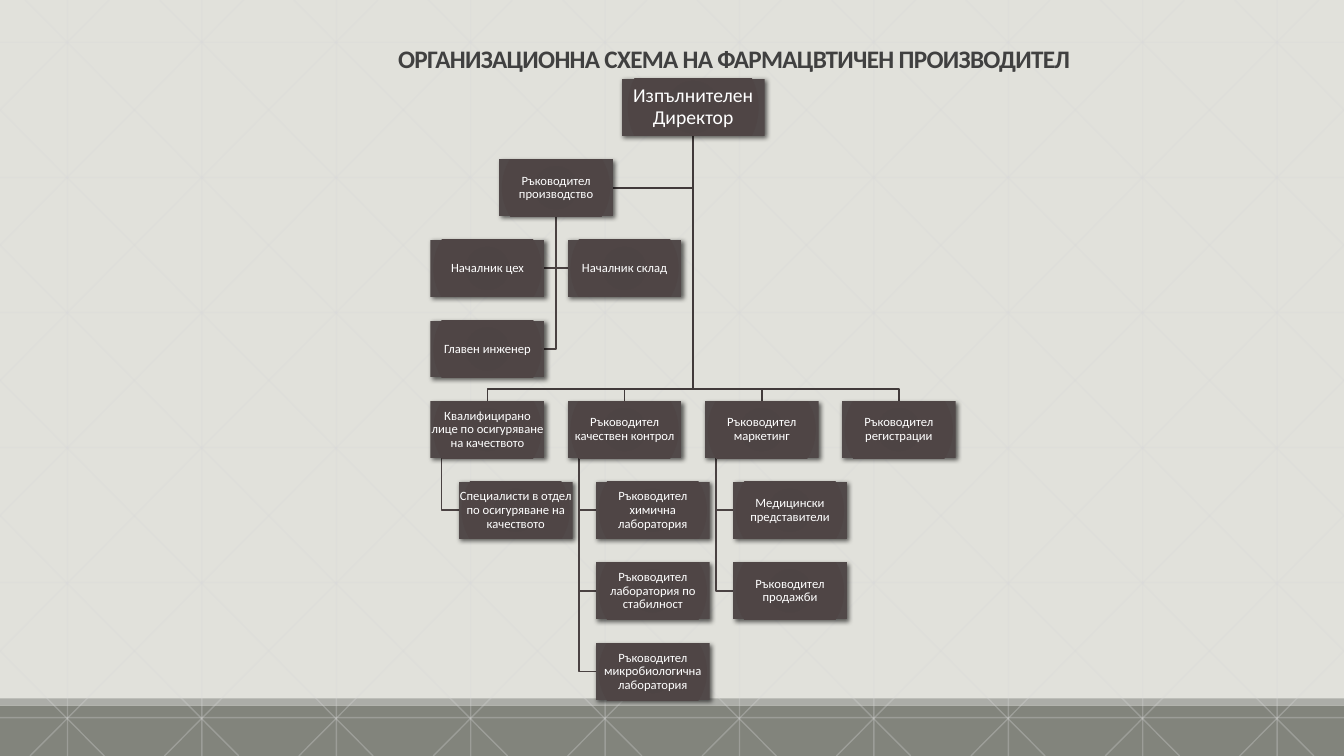
from dataclasses import dataclass

from lxml import etree
from pptx import Presentation
from pptx.dml.color import RGBColor
from pptx.enum.shapes import MSO_CONNECTOR, MSO_SHAPE
from pptx.enum.text import MSO_ANCHOR, PP_ALIGN
from pptx.oxml import parse_xml
from pptx.oxml.ns import nsdecls, qn
from pptx.util import Inches, Pt

LINE = MSO_CONNECTOR.STRAIGHT
RECTANGLE = MSO_SHAPE.RECTANGLE
CENTER = PP_ALIGN.CENTER
MIDDLE, BOTTOM = MSO_ANCHOR.MIDDLE, MSO_ANCHOR.BOTTOM


@dataclass(frozen=True)
class Theme:
    font: str = "Calibri"
    background: str = "E1E1DB"
    band: str = "82847C"
    band_edge: str = "ACADA8"
    lattice: str = "D9D9D9"
    title: str = "404040"
    text: str = "FFFFFF"
    shadow: str = "000000"
    main_branch: str = "413A3A"
    sub_branch: str = "4A4242"
    box_stops: tuple = ((0, "4D4343"), (34, "4D4444"), (70, "4F4545"), (100, "514949"))
    title_size: float = 18
    director_size: float = 14
    box_size: float = 9
    lattice_width: float = 1
    branch_width: float = 1.25


THEME = Theme()

WIDTH, HEIGHT = 13.33, 7.5
LATTICE_STEP = WIDTH / 10
DIAGONAL_RUN = 7.45

CHART_LEFT, CHART_TOP = 4.27, 0.78
COLUMN_STEP, ROW_STEP = 1.36, 0.8
BOX_WIDTH, BOX_HEIGHT = 1.13, 0.565
DIRECTOR_WIDTH = 1.42
STAFF_INDENT, RAIL_INDENT = 0.28, 0.11
BUS_GAP = 0.12
PRODUCTION_ROW, DEPARTMENT_ROW = 1, 4

DIRECTOR = "Изпълнителен Директор"
PRODUCTION = "Ръководител производство"
# Column, row and text of the boxes under production
PRODUCTION_STAFF = [
    (0, 2, "Началник цех"),
    (1, 2, "Началник склад"),
    (0, 3, "Главен инженер"),
]
DEPARTMENTS = [
    ("Квалифицирано лице по осигуряване на качеството",
     ["Специалисти в отдел по осигуряване на качеството"]),
    ("Ръководител качествен контрол",
     ["Ръководител химична лаборатория",
      "Ръководител лаборатория по стабилност",
      "Ръководител микробиологична лаборатория"]),
    ("Ръководител маркетинг",
     ["Медицински представители", "Ръководител продажби"]),
    ("Ръководител регистрации", []),
]


def column_left(column):
    return CHART_LEFT + column * COLUMN_STEP


def column_center(column):
    return column_left(column) + BOX_WIDTH / 2


def row_top(row):
    return CHART_TOP + row * ROW_STEP


def row_middle(row):
    return row_top(row) + BOX_HEIGHT / 2


def row_bottom(row):
    return row_top(row) + BOX_HEIGHT


def write_text(shape, text, *, size, color, anchor=MIDDLE, bold=False,
               line_spacing=0.9, inset=0.01, tracking=0):
    frame = shape.text_frame
    frame.word_wrap = True
    frame.vertical_anchor = anchor
    frame.margin_left = frame.margin_right = Inches(inset)
    frame.margin_top = frame.margin_bottom = Inches(inset)
    para = frame.paragraphs[0]
    para.alignment = CENTER
    para.line_spacing = line_spacing
    span = para.add_run()
    span.text = text
    span.font.name = THEME.font
    span.font.size = Pt(size)
    span.font.bold = bold
    span.font.color.rgb = RGBColor.from_string(color)
    if tracking:
        span.font._element.set("spc", str(round(tracking * 100)))


def add_rectangle(page, left, top, width, height):
    shape = page.shapes.add_shape(
        RECTANGLE, Inches(left), Inches(top), Inches(width), Inches(height))
    shape.shadow.inherit = False
    shape.line.fill.background()
    return shape


def add_band(page, top, height, color):
    band = add_rectangle(page, 0, top, WIDTH, height)
    band.fill.solid()
    band.fill.fore_color.rgb = RGBColor.from_string(color)


def add_lattice_line(page, start, end):
    line = page.shapes.add_connector(LINE, *(Inches(value) for value in (*start, *end)))
    line.line.width = Pt(THEME.lattice_width)
    line.line.color.rgb = RGBColor.from_string(THEME.lattice)
    properties = line._element.spPr
    color = properties.find(".//" + qn("a:srgbClr"))
    etree.SubElement(color, qn("a:alpha"), val="30000")
    etree.SubElement(properties, qn("a:effectLst"))


def add_lattice(page):
    """Upright, level and mirrored diagonal lines, cut at the slide edges."""
    for index in range(10):
        x = 0.67 + index * LATTICE_STEP
        add_lattice_line(page, (x, 0), (x, HEIGHT))
    for index in range(6):
        y = 0.42 + index * 1.34
        add_lattice_line(page, (0, y), (WIDTH, y))
    slope = HEIGHT / DIAGONAL_RUN
    for index in range(-5, 10):
        x = 0.25 + index * LATTICE_STEP
        left, right = max(x, 0), min(x + DIAGONAL_RUN, WIDTH)
        top, bottom = (left - x) * slope, (right - x) * slope
        add_lattice_line(page, (left, top), (right, bottom))
        add_lattice_line(page, (WIDTH - left, top), (WIDTH - right, bottom))


def add_branch(page, points, color):
    corners = [(Inches(x), Inches(y)) for x, y in points]
    builder = page.shapes.build_freeform(*corners[0])
    builder.add_line_segments(corners[1:], close=False)
    branch = builder.convert_to_shape()
    branch.shadow.inherit = False
    branch.fill.background()
    branch.line.width = Pt(THEME.branch_width)
    branch.line.color.rgb = RGBColor.from_string(color)


def add_box(page, left, row, text, width=BOX_WIDTH, size=THEME.box_size):
    box = add_rectangle(page, left, row_top(row), width, BOX_HEIGHT)
    box.fill.gradient()
    properties = box._element.spPr
    stops = "".join(f'<a:gs pos="{place * 1000}"><a:srgbClr val="{color}"/></a:gs>'
                    for place, color in THEME.box_stops)
    properties.replace(properties.find(qn("a:gradFill")), parse_xml(
        f'<a:gradFill {nsdecls("a")} rotWithShape="1"><a:gsLst>{stops}</a:gsLst>'
        '<a:path path="circle"><a:fillToRect l="100000" t="100000" r="100000" b="100000"/>'
        '</a:path></a:gradFill>'))
    properties.find(qn("a:effectLst")).append(parse_xml(
        f'<a:outerShdw {nsdecls("a")} blurRad="{Pt(3.5)}" dist="{Pt(2)}" dir="2700000" '
        f'rotWithShape="0"><a:srgbClr val="{THEME.shadow}"><a:alpha val="60000"/>'
        '</a:srgbClr></a:outerShdw>'))
    write_text(box, text, size=size, color=THEME.text)


def add_branches(page):
    trunk, production = column_center(1.5), column_center(0.5)
    for column, row, _ in PRODUCTION_STAFF:
        edge = column_left(column) + (BOX_WIDTH if column == 0 else 0)
        add_branch(page, [(production, row_bottom(PRODUCTION_ROW)),
                          (production, row_middle(row)),
                          (edge, row_middle(row))], THEME.sub_branch)
    add_branch(page, [(trunk, row_bottom(0)), (trunk, row_middle(PRODUCTION_ROW)),
                      (column_left(0.5) + BOX_WIDTH, row_middle(PRODUCTION_ROW))],
               THEME.main_branch)
    top = row_top(DEPARTMENT_ROW)
    for column, (_, staff) in enumerate(DEPARTMENTS):
        center, left = column_center(column), column_left(column)
        add_branch(page, [(trunk, row_bottom(0)), (trunk, top - BUS_GAP),
                          (center, top - BUS_GAP), (center, top)], THEME.main_branch)
        rail = left + RAIL_INDENT
        for row in range(DEPARTMENT_ROW + 1, DEPARTMENT_ROW + 1 + len(staff)):
            add_branch(page, [(rail, row_bottom(DEPARTMENT_ROW)), (rail, row_middle(row)),
                              (left + STAFF_INDENT, row_middle(row))], THEME.sub_branch)


def add_boxes(page):
    add_box(page, column_center(1.5) - DIRECTOR_WIDTH / 2, 0, DIRECTOR,
            width=DIRECTOR_WIDTH, size=THEME.director_size)
    for column, (head, staff) in enumerate(DEPARTMENTS):
        add_box(page, column_left(column), DEPARTMENT_ROW, head)
        for row, text in enumerate(staff, DEPARTMENT_ROW + 1):
            add_box(page, column_left(column) + STAFF_INDENT, row, text)
    add_box(page, column_left(0.5), PRODUCTION_ROW, PRODUCTION)
    for column, row, text in PRODUCTION_STAFF:
        add_box(page, column_left(column), row, text)


def add_title(page, text):
    box = page.shapes.add_textbox(Inches(2.09), Inches(0.12), Inches(10.38), Inches(0.66))
    write_text(box, text, size=THEME.title_size, color=THEME.title, anchor=BOTTOM,
               bold=True, line_spacing=0.85, inset=0.05, tracking=-0.5)


def main():
    deck = Presentation()
    deck.slide_width, deck.slide_height = Inches(WIDTH), Inches(HEIGHT)
    page = deck.slides.add_slide(deck.slide_layouts[6])
    page.background.fill.solid()
    page.background.fill.fore_color.rgb = RGBColor.from_string(THEME.background)
    add_band(page, 7, 0.5, THEME.band)
    add_band(page, 6.93, 0.07, THEME.band_edge)
    add_lattice(page)
    add_title(page, "ОРГАНИЗАЦИОННА СХЕМА НА ФАРМАЦВТИЧЕН ПРОИЗВОДИТЕЛ")
    add_branches(page)
    add_boxes(page)
    deck.save("out.pptx")


if __name__ == "__main__":
    main()
